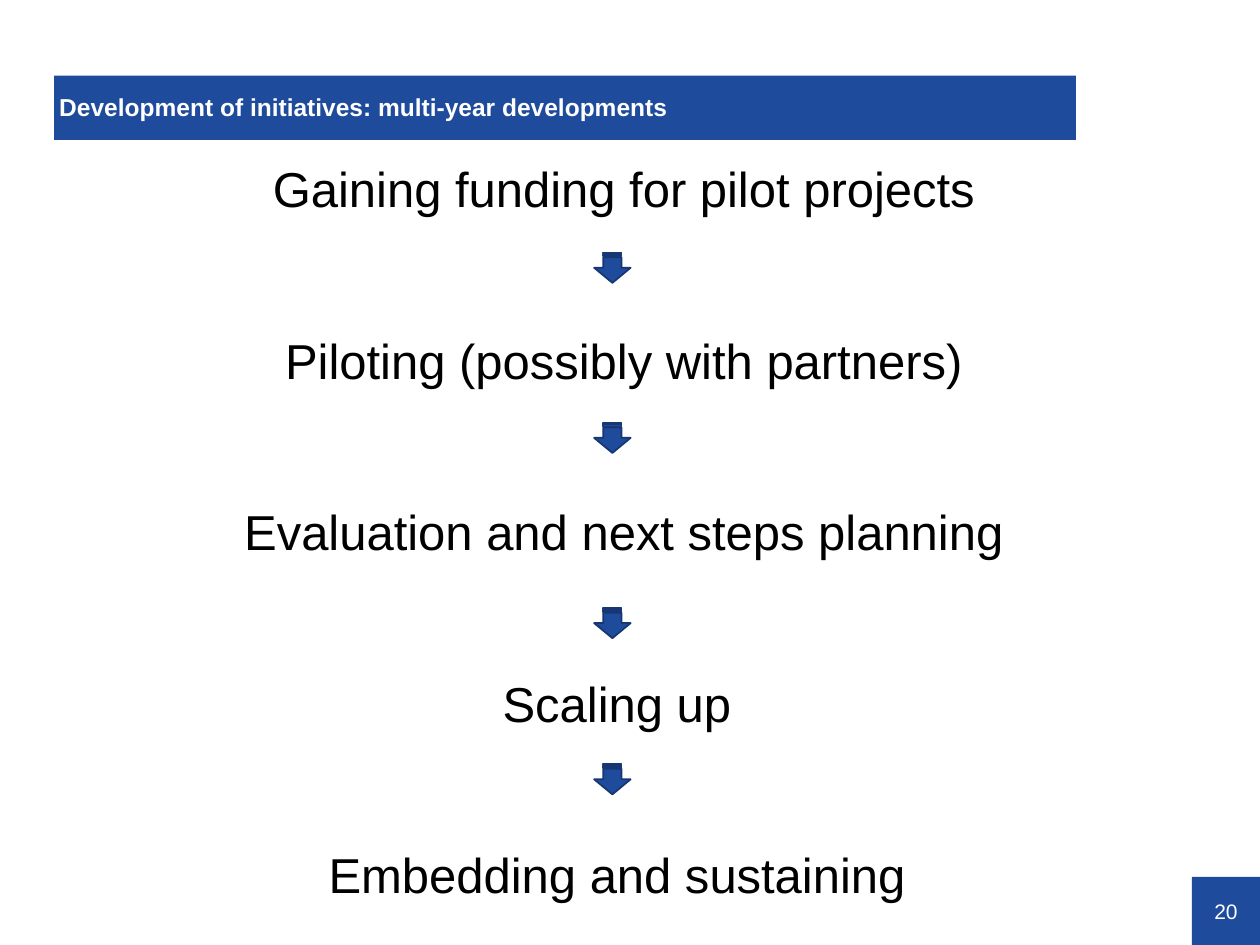
from pptx import Presentation
from pptx import util as u
from pptx.dml.color import RGBColor
from pptx.enum import shapes, text

COLOURS = {"blue": "1E4B9B", "navy": "163773", "white": "FFFFFF", "black": "000000"}
STAGES = [
    "Gaining funding for pilot projects",
    "Piloting (possibly with partners)",
    "Evaluation and next steps planning",
    "Scaling up ",
    "Embedding and sustaining ",
]
ARROW_TOPS = [1.98, 3.33, 4.8, 6.04]


def colour(name):
    """Return the named colour."""
    return RGBColor.from_string(COLOURS[name])


def write(box, lines, size, ink, bold=False, align=text.PP_ALIGN.LEFT,
          anchor=text.MSO_ANCHOR.MIDDLE, insets=(0, 0, 0, 0), spacing=1.0, gap=0):
    """Write one paragraph per line, with a gap in points between them."""
    frame = box.text_frame
    frame.word_wrap = True
    frame.vertical_anchor = anchor
    (frame.margin_left, frame.margin_top,
     frame.margin_right, frame.margin_bottom) = map(u.Inches, insets)
    for index, line in enumerate(lines):
        para = frame.add_paragraph() if index else frame.paragraphs[0]
        para.alignment = align
        para.line_spacing = spacing
        para.space_before = u.Pt(gap if index else 0)
        span = para.add_run()
        span.text = line
        span.font.name = "Arial"
        span.font.size = u.Pt(size)
        span.font.bold = bold
        span.font.color.rgb = colour(ink)


def add_block(page, kind, left, top, width, height, outline=None):
    """Add a blue preset shape with an optional outline."""
    block = page.shapes.add_shape(
        kind, u.Inches(left), u.Inches(top), u.Inches(width), u.Inches(height))
    block.shadow.inherit = False
    block.fill.solid()
    block.fill.fore_color.rgb = colour("blue")
    if outline:
        block.line.color.rgb = colour(outline)
        block.line.width = u.Pt(1)
    else:
        block.line.fill.background()
    return block


def add_stages(page):
    """Add the centred list of stages."""
    box = page.shapes.add_textbox(
        u.Inches(0.43), u.Inches(1.26), u.Inches(9.04), u.Inches(6.24))
    write(box, STAGES, 28, "black", align=text.PP_ALIGN.CENTER,
          anchor=text.MSO_ANCHOR.TOP, insets=(0.04,) * 4, spacing=0.94, gap=66.3)


def add_down_arrow(page, top):
    """Add a striped arrow that points down to the next stage."""
    arrow = add_block(page, shapes.MSO_SHAPE.STRIPED_RIGHT_ARROW,
                      4.74, top, 0.24, 0.29, outline="navy")
    arrow.rotation = 90


def main():
    """Build the slide and save it."""
    deck = Presentation()
    deck.slide_width, deck.slide_height = u.Inches(10), u.Inches(7.5)
    page = deck.slides.add_slide(deck.slide_layouts[6])
    rectangle = shapes.MSO_SHAPE.RECTANGLE
    number = add_block(page, rectangle, 9.46, 6.96, 0.54, 0.54)
    write(number, ["20"], 12, "white", align=text.PP_ALIGN.CENTER)
    title = add_block(page, rectangle, 0.43, 0.6, 8.11, 0.51)
    write(title, ["Development of initiatives: multi-year developments"], 14, "white",
          bold=True, insets=(0.04, 0.02, 0, 0), spacing=0.9)
    add_stages(page)
    for top in ARROW_TOPS:
        add_down_arrow(page, top)
    deck.save("out.pptx")


if __name__ == "__main__":
    main()
